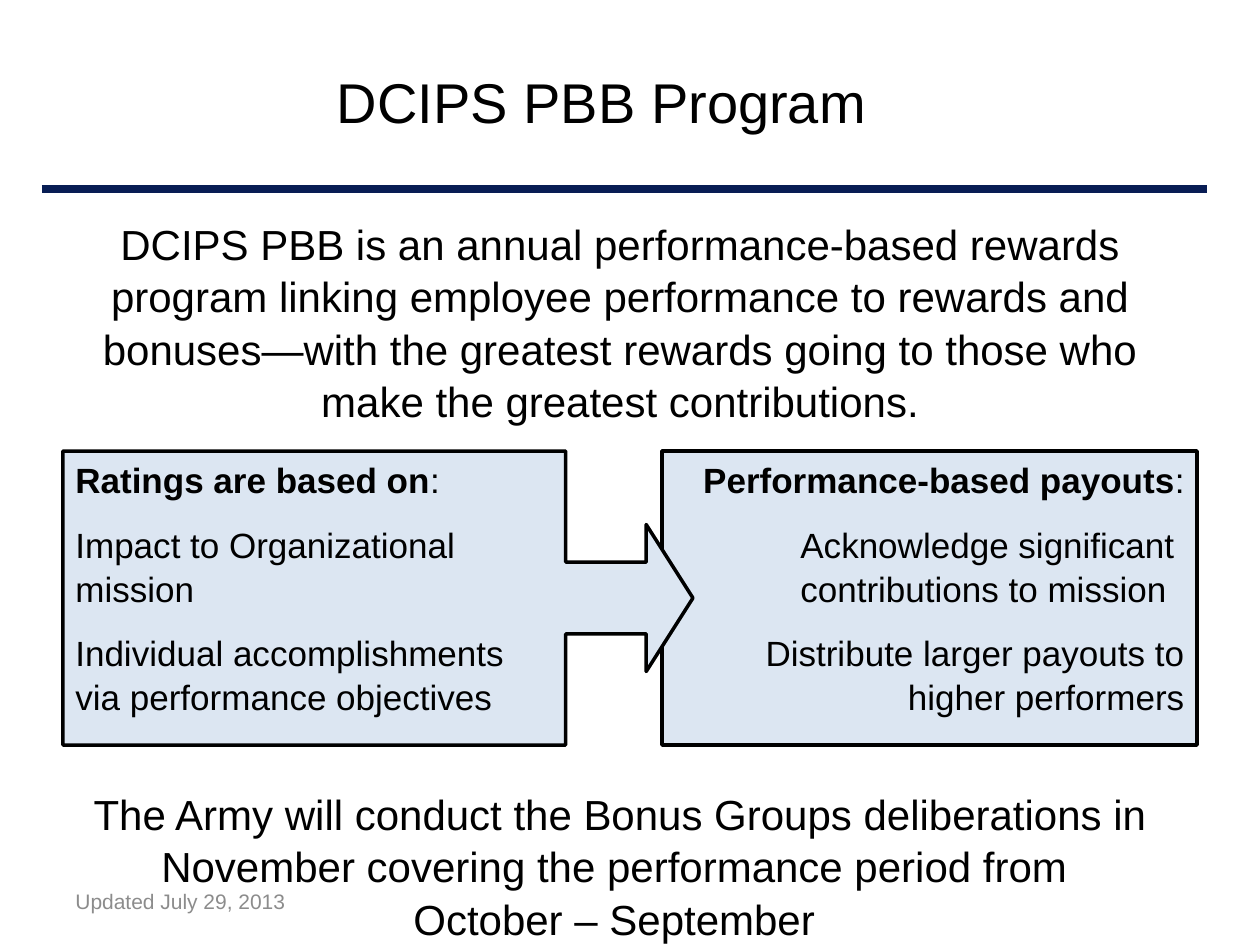
from dataclasses import dataclass

from lxml.etree import SubElement
from pptx import Presentation
from pptx.dml.color import RGBColor
from pptx.enum.shapes import MSO_CONNECTOR, MSO_SHAPE
from pptx.enum.text import MSO_ANCHOR, MSO_AUTO_SIZE, PP_ALIGN
from pptx.oxml.ns import qn
from pptx.util import Pt

EMU_PER_PX = 914400 / 126
FONT = "Arial"
BLACK, NAVY, PALE_BLUE, GREY = "000000", "081D54", "DCE6F2", "8C8C8C"
LINE_SPACING = 1.045


@dataclass(frozen=True)
class Box:
    left: int
    top: int
    width: int
    height: int


@dataclass(frozen=True)
class Point:
    text: str
    align: PP_ALIGN = PP_ALIGN.LEFT
    indent: int = 0


@dataclass(frozen=True)
class Panel:
    box: Box
    preset: MSO_SHAPE
    heading: str
    heading_align: PP_ALIGN
    points: tuple[Point, ...]
    adjustments: tuple[float, ...] = ()


PANELS = (
    Panel(
        Box(662, 451, 535, 294), MSO_SHAPE.RECTANGLE,
        "Performance-based payouts", PP_ALIGN.RIGHT,
        (
            Point("Acknowledge significant\vcontributions to mission", indent=126),
            Point("Distribute larger payouts to higher performers", PP_ALIGN.RIGHT),
        ),
    ),
    Panel(
        Box(63, 451, 630, 294), MSO_SHAPE.RIGHT_ARROW_CALLOUT,
        "Ratings are based on", PP_ALIGN.LEFT,
        (
            Point("Impact to Organizational mission"),
            Point("Individual accomplishments via performance objectives"),
        ),
        (0.244, 0.25, 0.159, 0.798),
    ),
)


def px(length: int) -> int:
    """Turn pixels into EMU."""
    return round(length * EMU_PER_PX)


def color(hex_code: str) -> RGBColor:
    """Turn a hex string into a colour."""
    return RGBColor.from_string(hex_code)


def place(shape, box: Box) -> None:
    """Move and size a shape."""
    shape.left, shape.top = px(box.left), px(box.top)
    shape.width, shape.height = px(box.width), px(box.height)


def style(paragraph, size: int, align: PP_ALIGN, ink: str = BLACK,
          before: float = 0, after: float = 0, indent: int = 0) -> None:
    """Format a paragraph without a bullet."""
    properties = paragraph._p.get_or_add_pPr()
    properties.set("marL", str(px(indent)))
    properties.set("indent", "0")
    SubElement(properties, qn("a:buNone"))
    paragraph.alignment = align
    paragraph.line_spacing = LINE_SPACING
    paragraph.space_before, paragraph.space_after = Pt(before), Pt(after)
    paragraph.font.name, paragraph.font.size = FONT, Pt(size)
    paragraph.font.color.rgb = color(ink)


def add_title(slide) -> None:
    """Fill the title placeholder."""
    title = slide.shapes.title
    place(title, Box(221, 21, 777, 158))
    title.text_frame.auto_size = MSO_AUTO_SIZE.NONE
    title.text_frame.vertical_anchor = MSO_ANCHOR.MIDDLE
    title.text_frame.text = "DCIPS PBB Program "
    style(title.text_frame.paragraphs[0], 32, PP_ALIGN.CENTER)


def add_body(slide) -> None:
    """Fill the body placeholder above and below the panels."""
    body = slide.placeholders[1]
    place(body, Box(53, 210, 1134, 714))
    frame = body.text_frame
    frame.auto_size = MSO_AUTO_SIZE.NONE
    summary = frame.paragraphs[0]
    summary.text = (
        "DCIPS PBB is an annual performance-based rewards program linking "
        "employee performance to rewards and bonuses—with the greatest rewards "
        "going to those who make the greatest contributions."
    )
    style(summary, 24, PP_ALIGN.CENTER)
    schedule = frame.add_paragraph()
    schedule.text = (
        "The Army will conduct the Bonus Groups deliberations in November "
        "covering the performance period from \vOctober – September "
    )
    style(schedule, 24, PP_ALIGN.CENTER, before=206)


def add_rule(slide) -> None:
    """Draw the line under the title."""
    rule = slide.shapes.add_connector(
        MSO_CONNECTOR.STRAIGHT, px(42), px(189), px(1207), px(189))
    rule.line.color.rgb = color(NAVY)
    rule.line.width = Pt(4.5)
    SubElement(rule._element.spPr, qn("a:effectLst"))


def add_panel(slide, panel: Panel) -> None:
    """Draw a panel with a bold heading and its points."""
    shape = slide.shapes.add_shape(panel.preset, 0, 0, 0, 0)
    place(shape, panel.box)
    for index, value in enumerate(panel.adjustments):
        shape.adjustments[index] = value
    shape.shadow.inherit = False
    shape.fill.solid()
    shape.fill.fore_color.rgb = color(PALE_BLUE)
    shape.line.color.rgb = color(BLACK)
    shape.line.width = Pt(2)
    frame = shape.text_frame
    frame.word_wrap = True
    frame.vertical_anchor = MSO_ANCHOR.TOP
    heading = frame.paragraphs[0]
    style(heading, 20, panel.heading_align, after=6)
    label = heading.add_run()
    label.text = panel.heading
    label.font.bold = True
    heading.add_run().text = ":"
    for point in panel.points:
        paragraph = frame.add_paragraph()
        paragraph.text = point.text
        style(paragraph, 20, point.align, before=6, after=6, indent=point.indent)


def add_update_date(slide) -> None:
    """Write the date of the last update."""
    update = slide.shapes.add_textbox(0, 0, 0, 0)
    place(update, Box(63, 876, 294, 50))
    frame = update.text_frame
    frame.word_wrap = True
    frame.vertical_anchor = MSO_ANCHOR.MIDDLE
    frame.text = "Updated July 29, 2013"
    style(frame.paragraphs[0], 12, PP_ALIGN.LEFT, GREY)


def main() -> None:
    """Build and save the slide."""
    deck = Presentation()
    deck.slide_width, deck.slide_height = px(1260), px(945)
    slide = deck.slides.add_slide(deck.slide_layouts[1])
    add_title(slide)
    add_rule(slide)
    add_body(slide)
    for panel in PANELS:
        add_panel(slide, panel)
    add_update_date(slide)
    deck.save("out.pptx")


if __name__ == "__main__":
    main()
